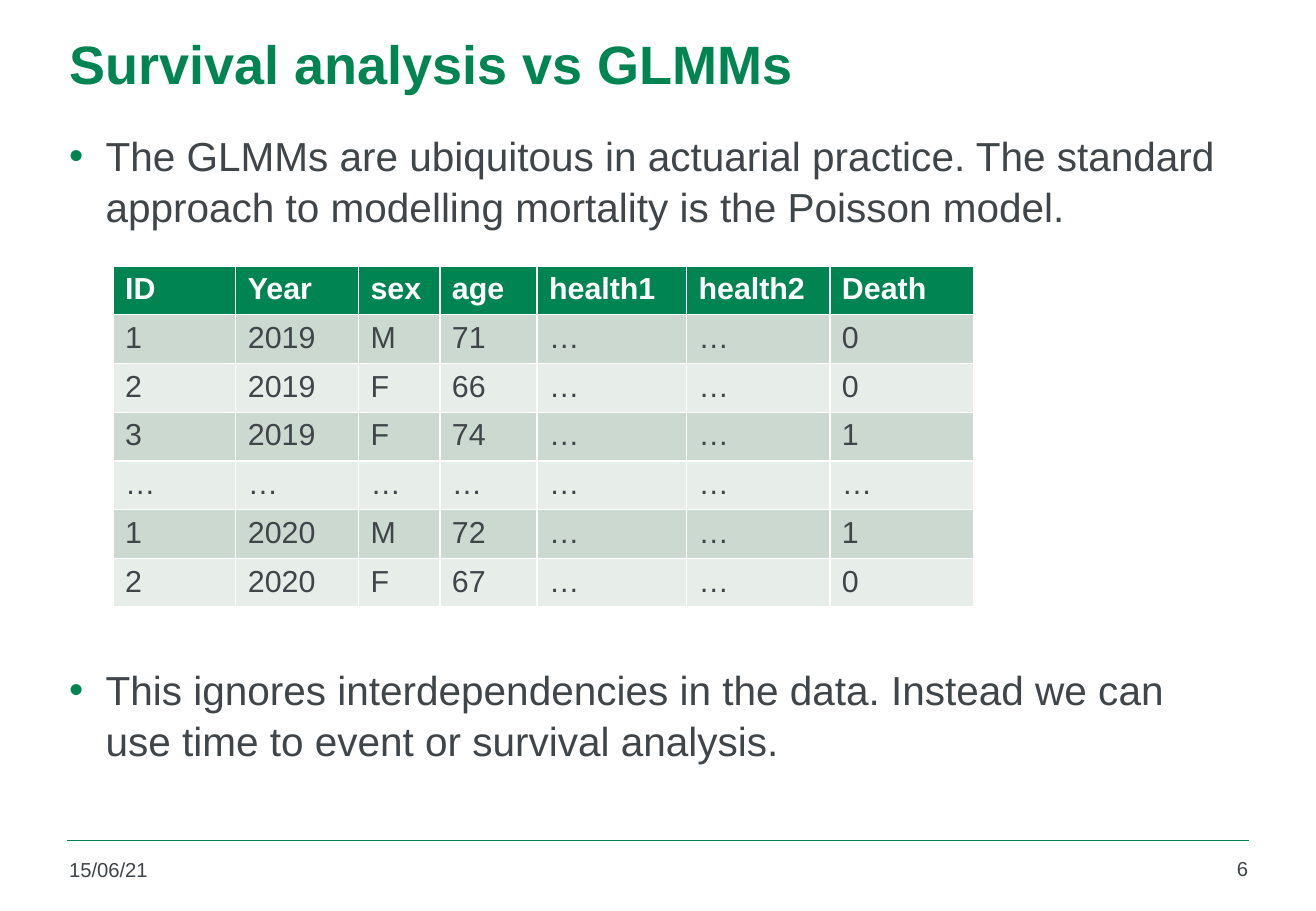
from lxml.etree import SubElement
from pptx import Presentation
from pptx.dml.color import RGBColor
from pptx.enum.shapes import MSO_CONNECTOR
from pptx.enum.text import MSO_ANCHOR, PP_ALIGN
from pptx.oxml.ns import qn
from pptx.util import Inches, Pt

GREEN, GREY, WHITE = "008452", "3F4548", "FFFFFF"
BANDS = ["E7EDE9", "CCD9D1"]


def tint(color, code):
    color.rgb = RGBColor.from_string(code)


def write(frame, lines, size, code, bold=False):
    frame.word_wrap = True
    frame.text = "\n".join(lines)
    for para in frame.paragraphs:
        for run in para.runs:
            run.font.name = "Arial"
            run.font.size = Pt(size)
            run.font.bold = bold
            tint(run.font.color, code)


deck = Presentation()
deck.slide_width = Inches(10.83)
deck.slide_height = Inches(7.5)
slide = deck.slides.add_slide(deck.slide_layouts[6])
shapes = slide.shapes

rule = shapes.add_connector(
    MSO_CONNECTOR.STRAIGHT, Inches(0.55), Inches(6.92), Inches(10.28), Inches(6.92))
tint(rule.line.color, GREEN)
rule.line.width = Pt(1)
SubElement(rule._element.spPr, qn("a:effectLst"))

title = shapes.add_textbox(Inches(0.47), Inches(-0.11), Inches(9.82), Inches(1.25)).text_frame
write(title, ["Survival analysis vs GLMMs"], 32, GREEN, True)
title.vertical_anchor = MSO_ANCHOR.MIDDLE

body = shapes.add_textbox(Inches(0.47), Inches(1.01), Inches(9.82), Inches(5.3)).text_frame
write(body, [
    "The GLMMs are ubiquitous in actuarial practice. The standard approach to "
    "modelling mortality is the Poisson model.",
    "This ignores interdependencies in the data. Instead we can use time to event "
    "or survival analysis.",
], 24, GREY)
for para in body.paragraphs:
    para.line_spacing = 1.05
    props = para._p.get_or_add_pPr()
    props.set("marL", str(Inches(0.3)))
    props.set("indent", str(-Inches(0.3)))
    paint = SubElement(props, qn("a:buClr"))
    SubElement(paint, qn("a:srgbClr"), val=GREEN)
    SubElement(props, qn("a:buFont"), typeface="Arial")
    SubElement(props, qn("a:buChar"), char="•")
body.paragraphs[1].space_before = Pt(256)

rows = [
    ["ID", "Year", "sex", "age", "health1", "health2", "Death"],
    ["1", "2019", "M", "71", "…", "…", "0"],
    ["2", "2019", "F", "66", "…", "…", "0"],
    ["3", "2019", "F", "74", "…", "…", "1"],
    ["…"] * 7,
    ["1", "2020", "M", "72", "…", "…", "1"],
    ["2", "2020", "F", "67", "…", "…", "0"],
]
widths = [1.01, 1.01, 0.67, 0.8, 1.23, 1.18, 1.18]
table = shapes.add_table(
    len(rows), len(widths), Inches(0.93), Inches(2.19), Inches(7.08), Inches(2.81)).table
for column, width in zip(table.columns, widths):
    column.width = Inches(width)
for r, row in enumerate(rows):
    head = r == 0
    for c, value in enumerate(row):
        cell = table.cell(r, c)
        write(cell.text_frame, [value], 18, WHITE if head else GREY, head)
        cell.fill.solid()
        tint(cell.fill.fore_color, GREEN if head else BANDS[r % 2])

footers = [
    ("15/06/21", 0.47, 7.01, 2.39, PP_ALIGN.LEFT),
    ("6", 9.6, 7, 0.77, PP_ALIGN.RIGHT),
]
for label, left, top, width, align in footers:
    frame = shapes.add_textbox(
        Inches(left), Inches(top), Inches(width), Inches(0.36)).text_frame
    write(frame, [label], 12, GREY)
    frame.paragraphs[0].alignment = align

deck.save("out.pptx")
